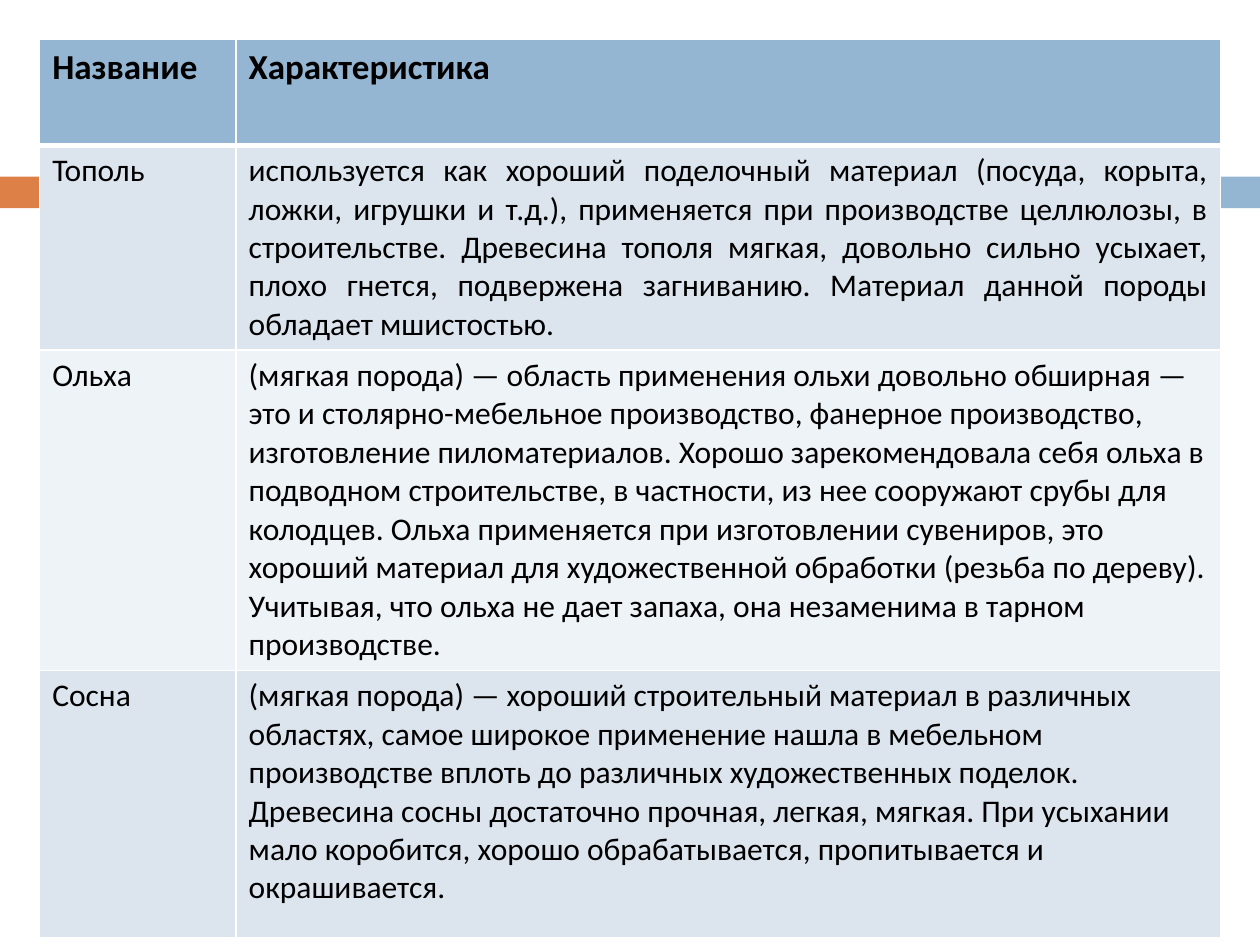
from lxml import etree
from pptx import Presentation
from pptx.dml.color import RGBColor
from pptx.enum.shapes import MSO_SHAPE
from pptx.enum.text import PP_ALIGN
from pptx.oxml.ns import qn
from pptx.util import Cm, Pt

RECT = MSO_SHAPE.RECTANGLE
LEFT, JUSTIFY = PP_ALIGN.LEFT, PP_ALIGN.JUSTIFY
COLORS = {
    "text": "000000",
    "border": "FFFFFF",
    "orange": "DD8047",
    "blue": "94B6D2",
    "band_dark": "DCE5EE",
    "band_light": "EEF3F7",
}
HEADER = ("Название", "Характеристика")
WOODS = [
    ("Тополь",
     "используется как хороший поделочный материал (посуда, корыта, ложки, игрушки и т.д.), "
     "применяется при производстве целлюлозы, в строительстве. Древесина тополя мягкая, "
     "довольно сильно усыхает, плохо гнется, подвержена загниванию. Материал данной породы "
     "обладает мшистостью.", JUSTIFY),
    ("Ольха",
     "(мягкая порода) — область применения ольхи довольно обширная — это и "
     "столярно-мебельное производство, фанерное производство, изготовление пиломатериалов. "
     "Хорошо зарекомендовала себя ольха в подводном строительстве, в частности, из нее "
     "сооружают срубы для колодцев. Ольха применяется при изготовлении сувениров, это "
     "хороший материал для художественной обработки (резьба по дереву). Учитывая, что ольха "
     "не дает запаха, она незаменима в тарном производстве.", LEFT),
    ("Сосна",
     "(мягкая порода) — хороший строительный материал в различных областях, самое широкое "
     "применение нашла в мебельном производстве вплоть до различных художественных поделок. "
     "Древесина сосны достаточно прочная, легкая, мягкая. При усыхании мало коробится, "
     "хорошо обрабатывается, пропитывается и окрашивается.", LEFT),
]


def rgb(name):
    return RGBColor.from_string(COLORS[name])


def write(tf, text, size=18, bold=False, color="text", align=LEFT, font="Calibri"):
    p = tf.paragraphs[0]
    p.alignment = align
    r = p.add_run()
    r.text = text
    r.font.name = font
    r.font.size = Pt(size)
    r.font.bold = bold
    r.font.color.rgb = rgb(color)


class SlideBuilder:
    def __init__(self, slide):
        self.s = slide

    def bar(self, x, y, w, h, color):
        sp = self.s.shapes.add_shape(RECT, Cm(x), Cm(y), Cm(w), Cm(h))
        sp.shadow.inherit = False
        sp.fill.solid()
        sp.fill.fore_color.rgb = rgb(color)
        sp.line.fill.background()

    def table(self, x, y, widths, heights):
        frame = self.s.shapes.add_table(len(heights), len(widths), Cm(x), Cm(y),
                                        Cm(sum(widths)), Cm(sum(heights)))
        table = frame.table
        for column, width in zip(table.columns, widths):
            column.width = Cm(width)
        for row, height in zip(table.rows, heights):
            row.height = Cm(height)
        return table

    def cell(self, cell, text, fill, top=1, bottom=1, **style):
        tc_pr = cell._tc.get_or_add_tcPr()
        for side, width in (("L", 1), ("R", 1), ("T", top), ("B", bottom)):
            line = etree.SubElement(tc_pr, qn(f"a:ln{side}"), w=str(Pt(width)))
            solid = etree.SubElement(line, qn("a:solidFill"))
            etree.SubElement(solid, qn("a:srgbClr"), val=COLORS["border"])
        cell.fill.solid()
        cell.fill.fore_color.rgb = rgb(fill)
        write(cell.text_frame, text, **style)


def main():
    prs = Presentation()
    prs.slide_width, prs.slide_height = Cm(25.4), Cm(19.05)
    builder = SlideBuilder(prs.slides.add_slide(prs.slide_layouts[6]))

    builder.bar(0, 3.56, 1.48, 0.64, "orange")
    builder.bar(1.65, 3.56, 23.75, 0.64, "blue")

    table = builder.table(0.8, 0.8, (3.96, 19.84), (2.13, 4.1, 6.4, 5.38))
    for col, title in enumerate(HEADER):
        builder.cell(table.cell(0, col), title, "blue", bottom=3, size=20, bold=True)
    for row, (name, description, align) in enumerate(WOODS, 1):
        fill = "band_dark" if row % 2 else "band_light"
        top = 3 if row == 1 else 1
        builder.cell(table.cell(row, 0), name, fill, top=top)
        builder.cell(table.cell(row, 1), description, fill, top=top, align=align)

    prs.save("out.pptx")


if __name__ == "__main__":
    main()
